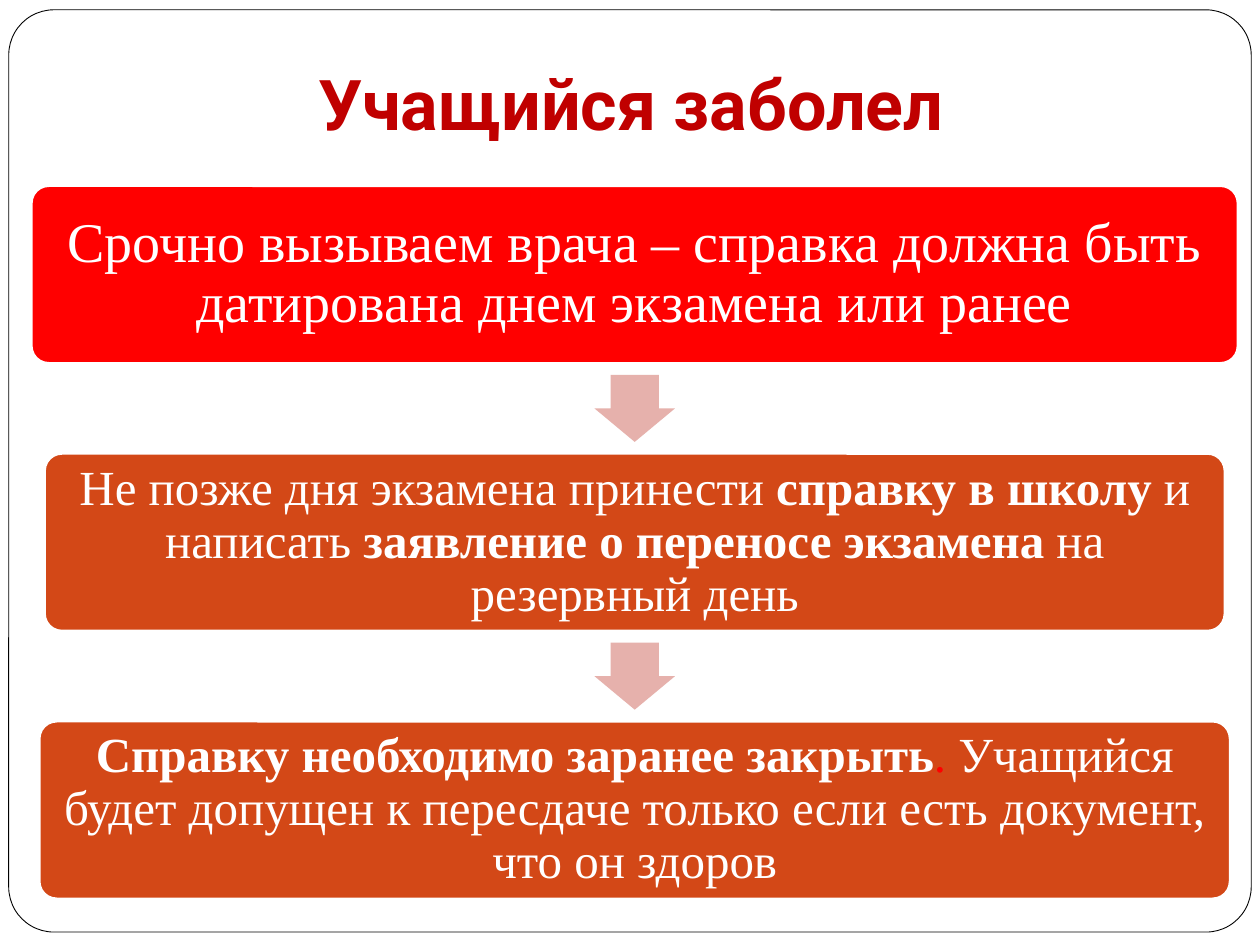
"""Build the slide on what to do when a student falls ill before an exam."""
from pptx import Presentation
from pptx.dml.color import RGBColor
from pptx.enum import shapes, text
from pptx.util import Pt

WHITE = RGBColor(0xFF, 0xFF, 0xFF)
BLACK = RGBColor(0x00, 0x00, 0x00)
RED = RGBColor(0xFF, 0x00, 0x00)
DARK_RED = RGBColor(0xC0, 0x00, 0x00)
ORANGE = RGBColor(0xD3, 0x48, 0x17)
PINK = RGBColor(0xE6, 0xB1, 0xAC)

SLIDE_WIDTH, SLIDE_HEIGHT = 720, 540
TITLE = "Учащийся заболел"
STEPS = [
    {"width": 690, "fill": RED, "size": 32, "spans": [
        ("Срочно вызываем врача – справка должна быть датирована днем экзамена или ранее", False, WHITE)]},
    {"width": 675, "fill": ORANGE, "size": 28, "spans": [
        ("Не позже дня экзамена принести ", False, WHITE),
        ("справку в школу ", True, WHITE),
        ("и написать ", False, WHITE),
        ("заявление о переносе экзамена", True, WHITE),
        (" на резервный день", False, WHITE)]},
    {"width": 681, "fill": ORANGE, "size": 28, "spans": [
        ("Справку необходимо заранее закрыть", True, WHITE),
        (". ", False, RED),
        ("Учащийся будет допущен к пересдаче только если есть документ, что он здоров", False, WHITE)]},
]
STEP_CENTER, STEP_TOP, STEP_HEIGHT, STEP_PITCH = 362.7, 105.9, 102, 153
ARROW_WIDTH, ARROW_HEIGHT = 46, 38.25


def write(shape, spans, font="Times New Roman", size=28, anchor=text.MSO_ANCHOR.MIDDLE,
          margins=(6, 6, 6, 6), spacing=0.9):
    frame = shape.text_frame
    frame.word_wrap = True
    frame.auto_size = text.MSO_AUTO_SIZE.NONE
    frame.vertical_anchor = anchor
    frame.margin_left, frame.margin_top, frame.margin_right, frame.margin_bottom = map(Pt, margins)
    para = frame.paragraphs[0]
    para.alignment = text.PP_ALIGN.CENTER
    para.line_spacing = spacing
    for words, bold, color in spans:
        span = para.add_run()
        span.text = words
        span.font.name, span.font.size, span.font.bold = font, Pt(size), bold
        span.font.color.rgb = color


def add_shape(page, kind, place, fill, adjustments, line=None, line_width=0):
    shape = page.shapes.add_shape(kind, *map(Pt, place))
    shape.shadow.inherit = False
    shape.fill.solid()
    shape.fill.fore_color.rgb = fill
    for index, value in enumerate(adjustments):
        shape.adjustments[index] = value
    if line is None:
        shape.line.fill.background()
    else:
        shape.line.color.rgb = line
        shape.line.width = Pt(line_width)
    return shape


def main():
    deck = Presentation()
    deck.slide_width, deck.slide_height = Pt(SLIDE_WIDTH), Pt(SLIDE_HEIGHT)
    page = deck.slides.add_slide(deck.slide_layouts[5])
    rounded = shapes.MSO_SHAPE.ROUNDED_RECTANGLE

    title = page.shapes.title
    title.left, title.top, title.width, title.height = map(Pt, (36.7, 0, 648, 90))
    write(title, [(TITLE, True, DARK_RED)], font="Roboto", size=40,
          anchor=text.MSO_ANCHOR.BOTTOM, margins=(7.2, 3.6, 7.2, 7.2), spacing=1.0)

    border = add_shape(page, rounded, (5, 5.6, 710, 527), WHITE, [0.049], BLACK, 0.5)
    title.element.addprevious(border.element)

    gap = STEP_PITCH - STEP_HEIGHT
    for index, step in enumerate(STEPS):
        top = STEP_TOP + index * STEP_PITCH
        if index:
            place = (STEP_CENTER - ARROW_WIDTH / 2, top - (gap + ARROW_HEIGHT) / 2,
                     ARROW_WIDTH, ARROW_HEIGHT)
            add_shape(page, shapes.MSO_SHAPE.DOWN_ARROW, place, PINK, [0.6, 0.5])
        place = (STEP_CENTER - step["width"] / 2, top, step["width"], STEP_HEIGHT)
        box = add_shape(page, rounded, place, step["fill"], [0.1], WHITE, 2)
        write(box, step["spans"], size=step["size"])

    deck.save("out.pptx")


if __name__ == "__main__":
    main()
